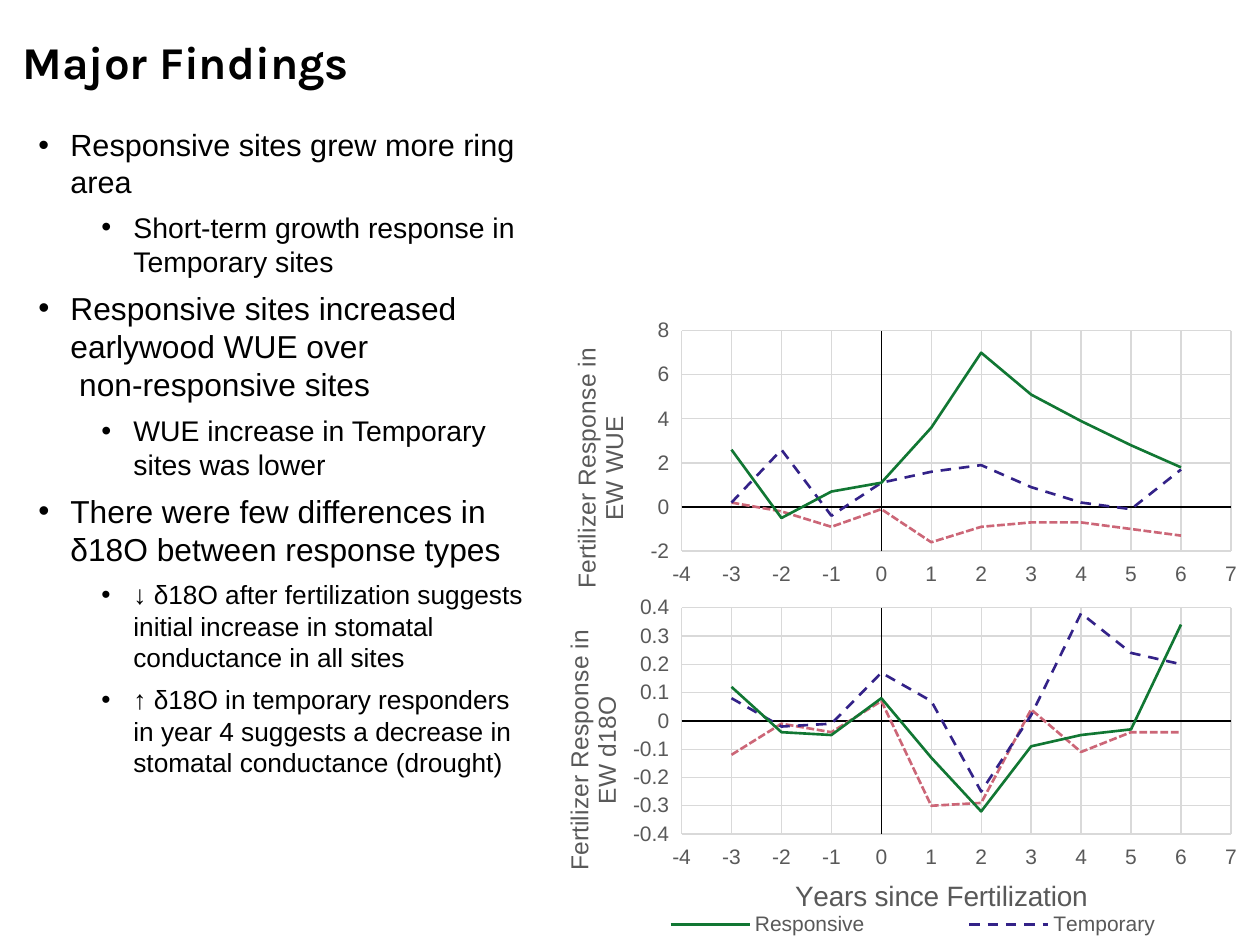
from lxml import etree
from pptx import Presentation
from pptx import util as u
from pptx.chart.data import XyChartData
from pptx.dml.color import RGBColor
from pptx.enum import chart as ch, dml, text
from pptx.oxml import parse_xml
from pptx.oxml.ns import nsdecls, qn

PX = 914400 // 126
BLACK = RGBColor(0, 0, 0)
WHITE = RGBColor(255, 255, 255)
GREY = RGBColor(0x59, 0x59, 0x59)
GRID = RGBColor(0xD9, 0xD9, 0xD9)
GREEN = RGBColor(0x11, 0x77, 0x33)
INDIGO = RGBColor(0x33, 0x22, 0x88)
ROSE = RGBColor(0xCC, 0x66, 0x77)

# Content: level, size, lines
POINTS = [
    (0, 17.5, ["Responsive sites grew more ring area"]),
    (1, 16.2, ["Short-term growth response in Temporary sites"]),
    (0, 18.1, ["Responsive sites increased earlywood WUE over",
               " non-responsive sites"]),
    (1, 16.2, ["WUE increase in Temporary sites was lower"]),
    (0, 18.1, ["There were few differences in δ18O between response types"]),
    (1, 15, ["↓ δ18O after fertilization suggests initial increase in "
             "stomatal conductance in all sites"]),
    (1, 15, ["↑ δ18O in temporary responders in year 4 suggests a decrease "
             "in stomatal conductance (drought)"]),
]
YEARS = range(-3, 7)
STYLES = [
    ("Responsive", GREEN, dml.MSO_LINE.SOLID),
    ("Temporary", INDIGO, dml.MSO_LINE.DASH),
    ("Non-Responsive", ROSE, dml.MSO_LINE.SQUARE_DOT),
]
CHARTS = [
    dict(box=(537, 315, 723, 315), title="Fertilizer Response in EW WUE",
         spot=(0.04, 0.09), scale=(-2, 8, 2), plot=(0.2, 0.05, 0.76, 0.7),
         foot=False, rows=[
             [2.6, -0.5, 0.7, 1.1, 3.6, 7, 5.1, 3.9, 2.8, 1.8],
             [0.2, 2.6, -0.4, 1.1, 1.6, 1.9, 0.9, 0.2, -0.1, 1.7],
             [0.2, -0.2, -0.9, -0.1, -1.6, -0.9, -0.7, -0.7, -1, -1.3]]),
    dict(box=(537, 590, 723, 354), title="Fertilizer Response in EW d18O",
         spot=(0.03, 0.1), scale=(-0.4, 0.4, 0.1), plot=(0.2, 0.05, 0.76, 0.64),
         foot=True, rows=[
             [0.12, -0.04, -0.05, 0.08, -0.13, -0.32, -0.09, -0.05, -0.03, 0.34],
             [0.08, -0.02, -0.01, 0.17, 0.07, -0.25, 0.02, 0.38, 0.24, 0.2],
             [-0.12, -0.01, -0.04, 0.07, -0.3, -0.29, 0.04, -0.11, -0.04, -0.04]]),
]


def style(font, size, color, name="Arial", bold=False):
    font.size, font.name, font.bold = u.Pt(size), name, bold
    font.color.rgb = color


def place(x, y, w=None, h=None, inner=False):
    """Manual layout in fractions of the chart."""
    parts = [("layoutTarget", "inner")] if inner else []
    parts += [("xMode", "edge"), ("yMode", "edge"), ("x", x), ("y", y)]
    if w:
        parts += [("w", w), ("h", h)]
    body = "".join(f'<c:{k} val="{v}"/>' for k, v in parts)
    return parse_xml(f'<c:layout {nsdecls("c")}><c:manualLayout>{body}'
                     '</c:manualLayout></c:layout>')


def set_layout(el, layout, after=None):
    for old in el.findall(qn("c:layout")):
        el.remove(old)
    if after is None:
        el.insert(0, layout)
    else:
        el.find(qn(after)).addnext(layout)


def set_axis(axis, low, high, step):
    axis.minimum_scale, axis.maximum_scale, axis.major_unit = low, high, step
    axis.major_tick_mark = axis.minor_tick_mark = ch.XL_TICK_MARK.NONE
    axis.tick_label_position = ch.XL_TICK_LABEL_POSITION.LOW
    axis.tick_labels.number_format = "General"
    axis.tick_labels.number_format_is_linked = False
    style(axis.tick_labels.font, 12, GREY)
    axis.has_major_gridlines = True
    for line, color in ((axis.format.line, BLACK),
                        (axis.major_gridlines.format.line, GRID)):
        line.color.rgb, line.width = color, u.Pt(0.75)


def set_title(axis, words, size, spot):
    axis.has_title = True
    run = axis.axis_title.text_frame.paragraphs[0].add_run()
    run.text = words
    style(run.font, size, GREY)
    set_layout(axis.axis_title._element, place(*spot), "c:tx")


def add_plot(slide, box, title, spot, scale, plot, foot, rows):
    data = XyChartData()
    for (name, _, _), row in zip(STYLES, rows):
        series = data.add_series(name)
        for year, val in zip(YEARS, row):
            series.add_data_point(year, val)
    chart = slide.shapes.add_chart(ch.XL_CHART_TYPE.XY_SCATTER_LINES_NO_MARKERS,
                                   *(v * PX for v in box), data).chart
    style(chart.font, 10.5, BLACK)
    chart.has_title = False
    chart.plots[0].vary_by_categories = False
    for series, (_, color, dash) in zip(chart.plots[0].series, STYLES):
        series.smooth = False
        series.marker.style = ch.XL_MARKER_STYLE.NONE
        line = series.format.line
        line.color.rgb, line.width, line.dash_style = color, u.Pt(1.5), dash
    set_axis(chart.category_axis, -4, 7, 1)
    set_axis(chart.value_axis, *scale)
    set_title(chart.value_axis, title, 14, spot)
    set_layout(chart._chartSpace.chart.plotArea, place(*plot, inner=True))

    # Shared year title and legend sit under the lower chart
    chart.has_legend = foot
    if foot:
        set_title(chart.category_axis, "Years since Fertilization", 16, (0.35, 0.8))
        legend = chart.legend
        legend.position = ch.XL_LEGEND_POSITION.BOTTOM
        legend.include_in_layout = False
        style(legend.font, 12, GREY)
        el = legend._element
        el.find(qn("c:legendPos")).addnext(parse_xml(
            f'<c:legendEntry {nsdecls("c")}><c:idx val="2"/>'
            '<c:delete val="1"/></c:legendEntry>'))
        set_layout(el, place(0.05, 0.91, 0.94, 0.08), "c:legendEntry")

    # White chart background
    fill = parse_xml(f'<c:spPr {nsdecls("c", "a")}><a:solidFill><a:srgbClr '
                     f'val="{WHITE}"/></a:solidFill><a:ln><a:noFill/></a:ln></c:spPr>')
    chart._chartSpace.chart.addnext(fill)


def add_box(slide, *box):
    return slide.shapes.add_textbox(*(v * PX for v in box)).text_frame


prs = Presentation()
prs.slide_width, prs.slide_height = 1260 * PX, 945 * PX
slide = prs.slides.add_slide(prs.slide_layouts[6])

# Heading
head = add_box(slide, 2, 28, 360, 50)
head.word_wrap = False
para = head.paragraphs[0]
para.alignment = text.PP_ALIGN.RIGHT
run = para.add_run()
run.text = "Major Findings"
style(run.font, 26, BLACK, "Karla", True)

# Findings
body = add_box(slide, 26, 120, 510, 746)
body.word_wrap = True
for i, (level, size, lines) in enumerate(POINTS):
    para = body.add_paragraph() if i else body.paragraphs[0]
    para.level = level
    para.space_after = u.Pt(6)
    props = para._p.get_or_add_pPr()
    props.set("marL", str((32, 95)[level] * PX))
    props.set("indent", str(-32 * PX))
    etree.SubElement(props, qn("a:buFont")).set("typeface", "Arial")
    etree.SubElement(props, qn("a:buChar")).set("char", "•")
    for n, words in enumerate(lines):
        if n:
            para.add_line_break()
        run = para.add_run()
        run.text = words
        style(run.font, size, BLACK)

# Charts
for spec in CHARTS:
    add_plot(slide, **spec)

prs.save("out.pptx")
